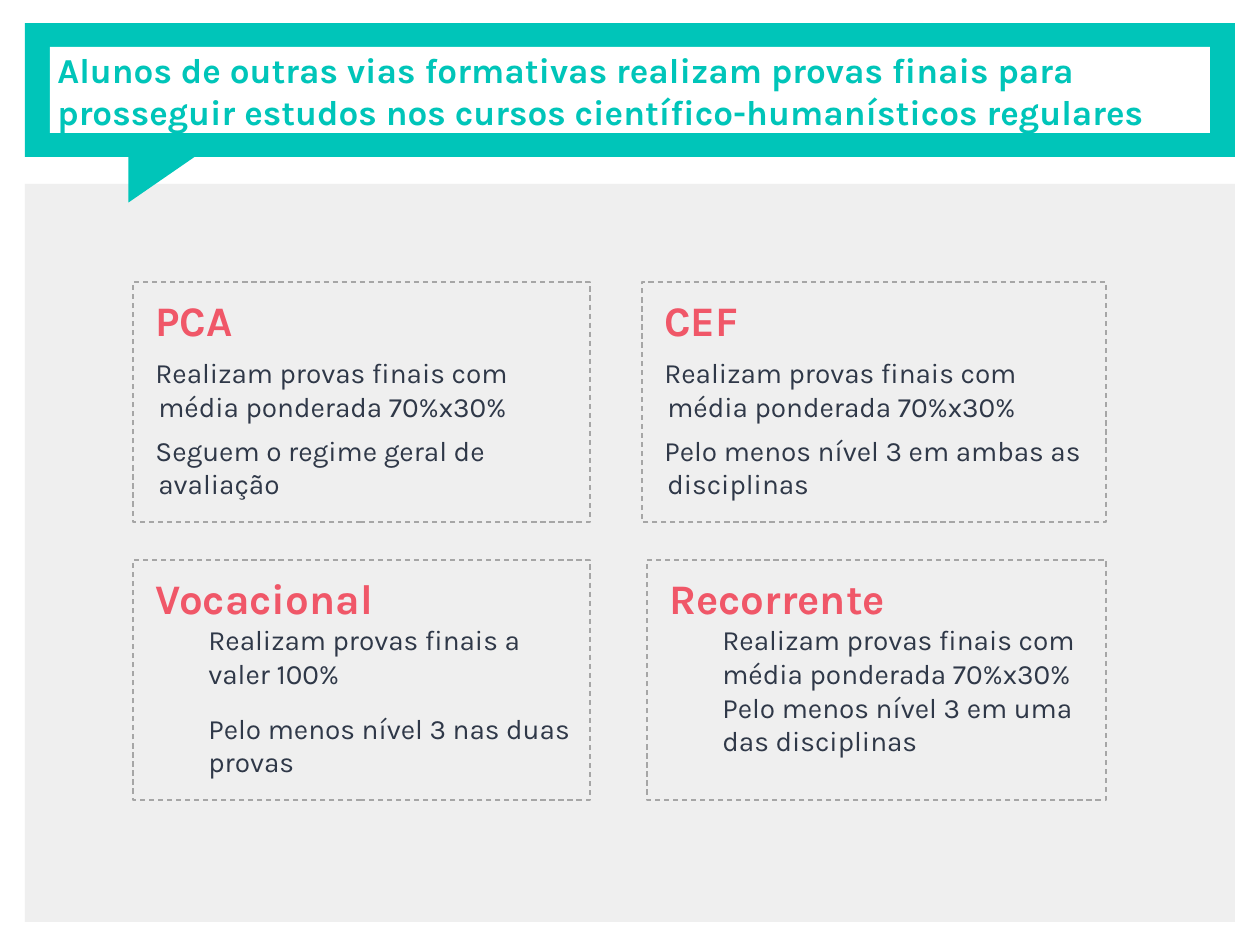
from pptx import Presentation
from pptx import util as u
from pptx.dml.color import RGBColor
from pptx.enum import dml, shapes, text

EMU_PER_PX = 914400 / 126
FONT = "Karla"
COLORS = {
    "teal": "00C5B9",
    "panel": "EFEFEF",
    "white": "FFFFFF",
    "heading": "F05768",
    "body": "2F3848",
    "border": "A6A6A6",
}
# Paragraph formats: left margin and first-line indent in px, spacing in points
HEADING = {"size": 24, "bold": True, "color": "heading", "margin": 63, "indent": -53, "before": 6}
HANGING = {"size": 16, "color": "body", "margin": 13, "indent": -3, "before": 6}
INDENTED = {"size": 16, "color": "body", "margin": 63}
SPACED = {**INDENTED, "after": 12}
TITLE = {"size": 20, "bold": True, "color": "teal"}

TITLE_TEXT = ("Alunos de outras vias formativas realizam provas finais para "
              "prosseguir estudos nos cursos científico-humanísticos regulares")
WEIGHTED = "Realizam provas finais com média ponderada 70%x30%"

# Cards share their right edge per column and their top per row
COLUMN_RIGHTS = (590, 1106)
ROW_TOPS = (282, 560)
CARD_HEIGHT = 240
# column, row, left, heading, [(text, format)]
CARDS = [
    (0, 0, 133, "PCA", [(WEIGHTED, HANGING),
                        ("Seguem o regime geral de avaliação", HANGING)]),
    (1, 0, 642, "CEF", [(WEIGHTED, HANGING),
                        ("Pelo menos nível 3 em ambas as disciplinas", HANGING)]),
    (0, 1, 133, "Vocacional", [("Realizam provas finais a valer 100%", SPACED),
                               ("Pelo menos nível 3 nas duas provas", INDENTED)]),
    (1, 1, 647, "Recorrente", [(WEIGHTED, INDENTED),
                               ("Pelo menos nível 3 em uma das disciplinas", INDENTED)]),
]


def px(value):
    return u.Emu(round(value * EMU_PER_PX))


def rgb(name):
    return RGBColor.from_string(COLORS[name])


def add_block(slide, box, color, kind=shapes.MSO_SHAPE.RECTANGLE, rotation=0):
    shape = slide.shapes.add_shape(kind, *map(px, box))
    shape.shadow.inherit = False
    shape.fill.solid()
    shape.fill.fore_color.rgb = rgb(color)
    shape.line.fill.background()
    shape.rotation = rotation
    return shape


def write_paragraph(paragraph, content, style):
    run = paragraph.add_run()
    run.text = content
    font_values = {"name": FONT, "size": u.Pt(style["size"]), "bold": style.get("bold", False)}
    for name, value in font_values.items():
        setattr(run.font, name, value)
    run.font.color.rgb = rgb(style["color"])

    spacing = {
        "alignment": text.PP_ALIGN.LEFT,
        "space_before": u.Pt(style.get("before", 0)),
        "space_after": u.Pt(style.get("after", 0)),
    }
    for name, value in spacing.items():
        setattr(paragraph, name, value)
    properties = paragraph._p.get_or_add_pPr()
    properties.set("marL", str(px(style.get("margin", 0))))
    properties.set("indent", str(px(style.get("indent", 0))))


def fill_text(shape, anchor, entries):
    frame = shape.text_frame
    frame_values = {"word_wrap": True, "vertical_anchor": anchor}
    for side in ("left", "right", "top", "bottom"):
        frame_values[f"margin_{side}"] = u.Inches(0.1)
    for name, value in frame_values.items():
        setattr(frame, name, value)
    for index, (content, style) in enumerate(entries):
        paragraph = frame.add_paragraph() if index else frame.paragraphs[0]
        write_paragraph(paragraph, content, style)


def add_title(slide):
    # Speech banner: frame, tail, white inset
    add_block(slide, (25, 23, 1210, 134), "teal")
    add_block(slide, (142, 129, 60, 87), "teal", shapes.MSO_SHAPE.RIGHT_TRIANGLE, 90)
    add_block(slide, (50, 47, 1160, 86), "white")
    # Title text
    title = slide.shapes.add_textbox(*map(px, (45, 23, 1165, 134)))
    fill_text(title, text.MSO_ANCHOR.MIDDLE, [(TITLE_TEXT, TITLE)])


def add_card(slide, column, row, left, heading, entries):
    box = (left, ROW_TOPS[row], COLUMN_RIGHTS[column] - left, CARD_HEIGHT)
    card = add_block(slide, box, "panel")
    card.fill.background()
    card.line.color.rgb = rgb("border")
    card.line.width = u.Pt(0.75)
    card.line.dash_style = dml.MSO_LINE.DASH
    fill_text(card, text.MSO_ANCHOR.TOP, [(heading, HEADING), *entries])


def main():
    presentation = Presentation()
    presentation.slide_width = px(1260)
    presentation.slide_height = px(945)
    slide = presentation.slides.add_slide(presentation.slide_layouts[6])

    # Grey content panel
    add_block(slide, (25, 184, 1210, 738), "panel")
    add_title(slide)
    # Four training paths
    for card in CARDS:
        add_card(slide, *card)

    presentation.save("out.pptx")


if __name__ == "__main__":
    main()
